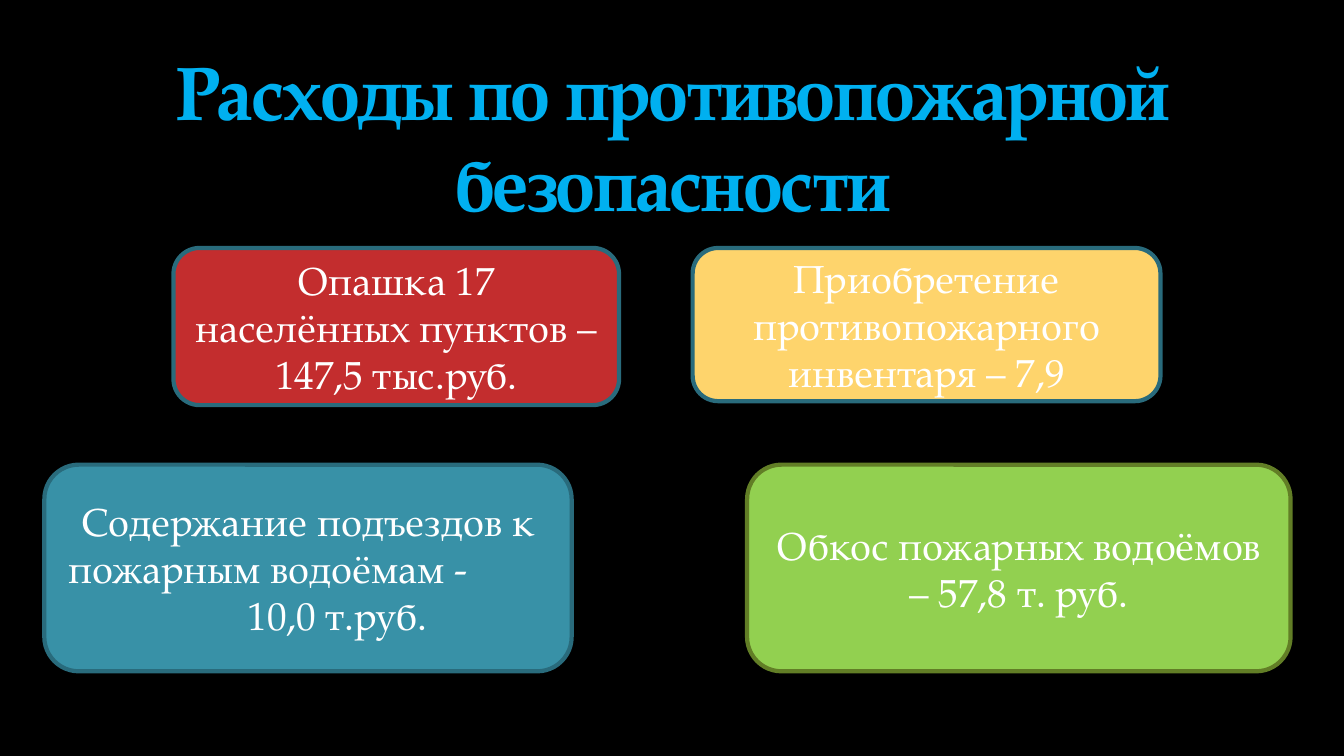
from lxml import etree
from pptx import Presentation
from pptx.dml.color import RGBColor
from pptx.enum.shapes import MSO_SHAPE
from pptx.enum.text import MSO_ANCHOR, PP_ALIGN
from pptx.oxml import parse_xml
from pptx.oxml.ns import nsdecls
from pptx.util import Inches, Pt

ALTERNATE = MSO_SHAPE.FLOWCHART_ALTERNATE_PROCESS
ROUNDED = MSO_SHAPE.ROUNDED_RECTANGLE
MIDDLE, BOTTOM = MSO_ANCHOR.MIDDLE, MSO_ANCHOR.BOTTOM
CENTER, LEFT = PP_ALIGN.CENTER, PP_ALIGN.LEFT

BLACK = RGBColor(0x00, 0x00, 0x00)
WHITE = RGBColor(0xFF, 0xFF, 0xFF)
SKY = RGBColor(0x00, 0xB0, 0xF0)
RED = RGBColor(0xC3, 0x2D, 0x2E)
YELLOW = RGBColor(0xFE, 0xD4, 0x6C)
TEAL = RGBColor(0x38, 0x91, 0xA7)
GREEN = RGBColor(0x92, 0xD0, 0x50)
DARK_TEAL = RGBColor(0x29, 0x6B, 0x7C)
DARK_GREEN = RGBColor(0x62, 0x7E, 0x26)

FONT = "TeX Gyre Pagella"
TITLE_FORMAT = {"name": FONT, "size": Pt(54), "bold": True}
CARD_FORMAT = {"name": FONT, "size": Pt(28), "bold": False}


def add_text(paragraph, text, font_format, color):
    run = paragraph.add_run()
    run.text = text
    for name, value in font_format.items():
        setattr(run.font, name, value)
    run.font.color.rgb = color
    return run


presentation = Presentation()
presentation.slide_width = Inches(13.33)
presentation.slide_height = Inches(7.5)
slide = presentation.slides.add_slide(presentation.slide_layouts[6])
slide.background.fill.solid()
slide.background.fill.fore_color.rgb = BLACK

# Title with tight letter spacing and a faint outline
title = slide.shapes.add_textbox(Inches(0.67), Inches(0.17), Inches(12), Inches(2.13))
title.text_frame.word_wrap = True
title.text_frame.vertical_anchor = BOTTOM
paragraph = title.text_frame.paragraphs[0]
paragraph.alignment = CENTER
run = add_text(paragraph, "Расходы по противопожарной безопасности", TITLE_FORMAT, SKY)
properties = run.font._element
properties.set("spc", "-100")
outline = parse_xml(f'<a:ln {nsdecls("a")} w="3175"/>')
outline_fill = etree.SubElement(outline, outline.tag.replace("}ln", "}solidFill"))
outline_color = etree.SubElement(outline_fill, outline.tag.replace("}ln", "}srgbClr"), val="462219")
etree.SubElement(outline_color, outline.tag.replace("}ln", "}alpha"), val="25000")
properties.insert(0, outline)

# Expense cards: shape, position, fill, line, paragraphs (text, alignment, left indent)
cards = [
    (ALTERNATE, (1.72, 2.46, 4.42, 1.56), RED, DARK_TEAL,
     [("Опашка 17 населённых пунктов – 147,5 тыс.руб.", CENTER, 0)]),
    (ALTERNATE, (6.87, 2.46, 4.64, 1.52), YELLOW, DARK_TEAL,
     [("Приобретение противопожарного инвентаря – 7,9", CENTER, 0)]),
    (ALTERNATE, (0.44, 4.61, 5.23, 2.05), TEAL, DARK_TEAL,
     [("Содержание подъездов к", CENTER, 0),
      ("пожарным водоёмам -", LEFT, 0.04),
      ("10,0 т.руб.", CENTER, 0.58)]),
    (ROUNDED, (7.41, 4.61, 5.39, 2.05), GREEN, DARK_GREEN,
     [("Обкос пожарных водоёмов – 57,8 т. руб.", CENTER, 0)]),
]
for kind, position, fill, line, lines in cards:
    card = slide.shapes.add_shape(kind, *map(Inches, position))
    card.shadow.inherit = False
    card.fill.solid()
    card.fill.fore_color.rgb = fill
    card.line.color.rgb = line
    card.line.width = Pt(3)
    frame = card.text_frame
    frame.word_wrap = True
    frame.vertical_anchor = MIDDLE
    for index, (text, alignment, indent) in enumerate(lines):
        paragraph = frame.add_paragraph() if index else frame.paragraphs[0]
        paragraph.alignment = alignment
        if indent:
            paragraph._p.get_or_add_pPr().set("marL", str(Inches(indent)))
        add_text(paragraph, text, CARD_FORMAT, WHITE)

presentation.save("out.pptx")
